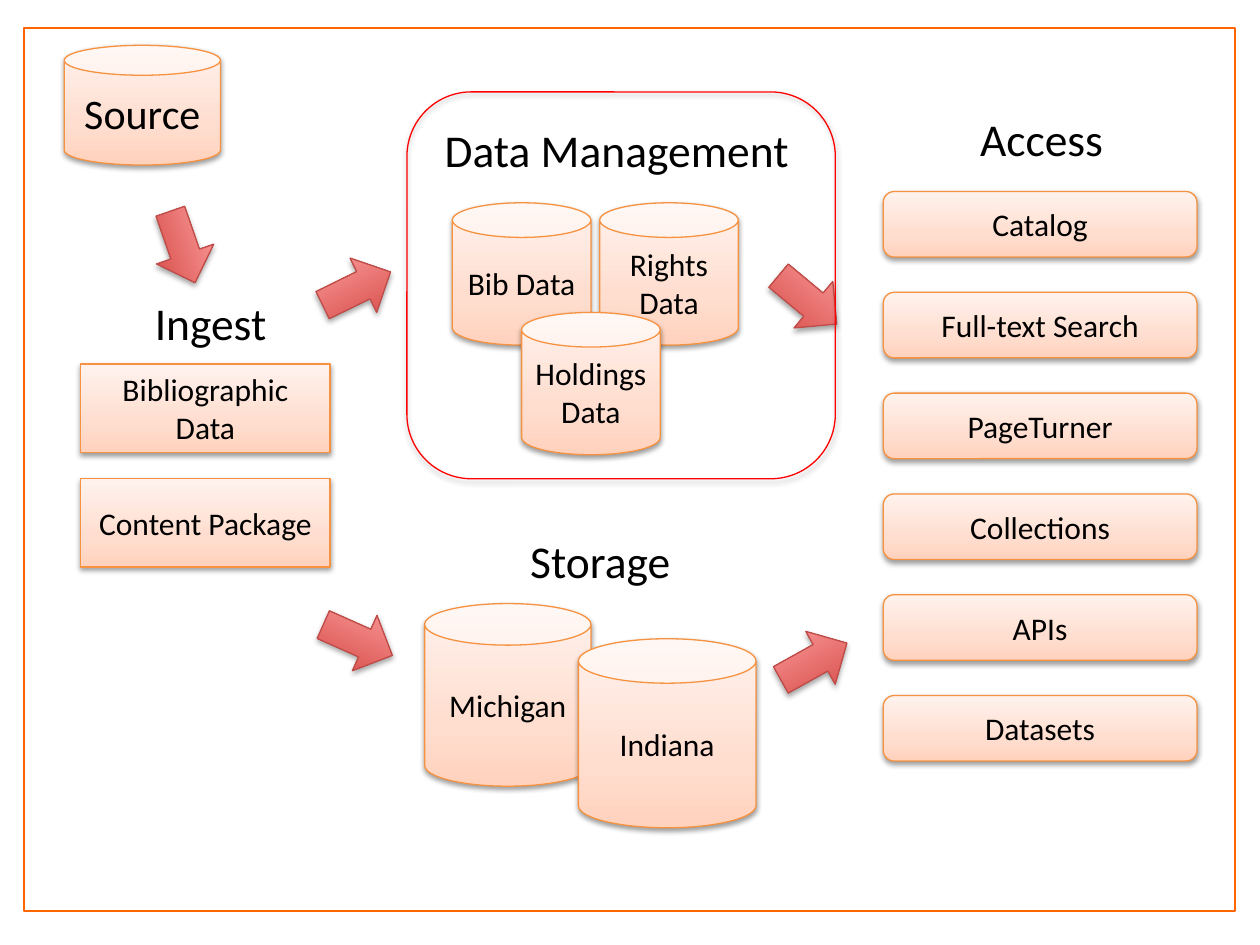
from lxml import etree
from pptx import Presentation, util as u
from pptx.dml.color import RGBColor
from pptx.enum import shapes, text
from pptx.oxml.ns import qn

FONT = "Calibri"
BLACK = RGBColor(0x00, 0x00, 0x00)
WHITE = RGBColor(0xFF, 0xFF, 0xFF)
FRAME_LINE = RGBColor(0xFF, 0x66, 0x00)
PEACH_LINE = RGBColor(0xF6, 0x92, 0x40)
ARROW_LINE = RGBColor(0xBF, 0x4C, 0x48)
RED = RGBColor(0xFF, 0x00, 0x00)
PEACH = [(0, RGBColor(0xFF, 0xD2, 0xBD)), (35, RGBColor(0xFF, 0xDE, 0xD0)),
         (100, RGBColor(0xFF, 0xF2, 0xED))]
ARROW = [(0, RGBColor(0xD1, 0x40, 0x3C)), (100, RGBColor(0xFF, 0xA6, 0xA5))]

KIND = shapes.MSO_SHAPE
DATA_SIZE = (1.1, 1.13)
CANS = [
    ("Source", 0.51, 0.36, (1.24, 0.95), 24),
    ("Bib Data", 3.59, 1.61, DATA_SIZE, 18),
    ("Rights Data", 4.76, 1.61, DATA_SIZE, 18),
    ("Holdings Data", 4.14, 2.48, DATA_SIZE, 18),
    ("Michigan", 3.37, 4.79, (1.32, 1.45), 18),
    ("Indiana", 4.59, 5.07, (1.41, 1.5), 18),
]
INGEST = ["Bibliographic Data", "Content Package"]
ACCESS = ["Catalog", "Full-text Search", "PageTurner", "Collections", "APIs", "Datasets"]
HEADINGS = [
    ("Data Management", 3.43, 0.92, 3.58),
    ("Storage", 4.11, 4.18, 1.77),
    ("Access", 7.68, 0.83, 1.99),
    ("Ingest", 1.13, 2.29, 1.61),
]
ARROWS = [
    (1.15, 1.72, 70.9),
    (2.53, 2.05, 333.9),
    (2.54, 4.84, 24),
    (6.11, 2.14, 39.8),
    (6.16, 5.01, 330.9),
]


def add_shape(kind, left, top, width, height, line, line_width=0.75):
    sp = s.shapes.add_shape(kind, *map(u.Inches, (left, top, width, height)))
    sp.shadow.inherit = False
    sp.line.color.rgb = line
    sp.line.width = u.Pt(line_width)
    return sp


def add_shadow(sp, opacity, distance):
    effects = sp._element.spPr.find(qn("a:effectLst"))
    shadow = etree.SubElement(effects, qn("a:outerShdw"), blurRad=str(u.Pt(3.1)),
                              dist=str(u.Pt(distance)), dir="5400000", rotWithShape="0")
    color = etree.SubElement(shadow, qn("a:srgbClr"), val=str(BLACK))
    etree.SubElement(color, qn("a:alpha"), val=str(opacity * 1000))


def add_gradient(sp, stops):
    sp.fill.gradient()
    sp.fill.gradient_angle = 90
    stop_list = sp._element.spPr.find(qn("a:gradFill")).find(qn("a:gsLst"))
    for old in list(stop_list):
        stop_list.remove(old)
    for position, color in stops:
        stop = etree.SubElement(stop_list, qn("a:gs"), pos=str(position * 1000))
        etree.SubElement(stop, qn("a:srgbClr"), val=str(color))


def write(sp, label, size, align):
    tf = sp.text_frame
    tf.word_wrap = True
    tf.text = label
    p = tf.paragraphs[0]
    p.alignment = align
    r = p.runs[0]
    r.font.name = FONT
    r.font.size = u.Pt(size)
    r.font.color.rgb = BLACK


def add_peach(kind, label, left, top, width, height, size=18):
    sp = add_shape(kind, left, top, width, height, PEACH_LINE)
    add_gradient(sp, PEACH)
    add_shadow(sp, 38, 1.6)
    write(sp, label, size, text.PP_ALIGN.CENTER)
    sp.text_frame.vertical_anchor = text.MSO_ANCHOR.MIDDLE


prs = Presentation()
prs.slide_width, prs.slide_height = u.Inches(10), u.Inches(7.5)
s = prs.slides.add_slide(prs.slide_layouts[6])

frame = add_shape(KIND.RECTANGLE, 0.19, 0.22, 9.61, 7.01, FRAME_LINE, 1)
frame.fill.solid()
frame.fill.fore_color.rgb = WHITE

for label, left, top, (width, height), size in CANS:
    add_peach(KIND.CAN, label, left, top, width, height, size)

for i, label in enumerate(INGEST):
    add_peach(KIND.RECTANGLE, label, 0.64, 2.89 + 0.91 * i, 1.98, 0.7)

for i, label in enumerate(ACCESS):
    add_peach(KIND.ROUNDED_RECTANGLE, label, 7.01, 1.52 + 0.8 * i, 2.49, 0.52)

for label, left, top, width in HEADINGS:
    box = s.shapes.add_textbox(*map(u.Inches, (left, top, width, 0.54)))
    write(box, label, 26, text.PP_ALIGN.LEFT)

for left, top, angle in ARROWS:
    arrow = add_shape(KIND.RIGHT_ARROW, left, top, 0.6, 0.48, ARROW_LINE)
    arrow.rotation = angle
    add_gradient(arrow, ARROW)
    add_shadow(arrow, 35, 1.8)

management = add_shape(KIND.ROUNDED_RECTANGLE, 3.23, 0.73, 3.4, 3.07, RED)
management.fill.background()
add_shadow(management, 35, 1.8)

prs.save("out.pptx")
